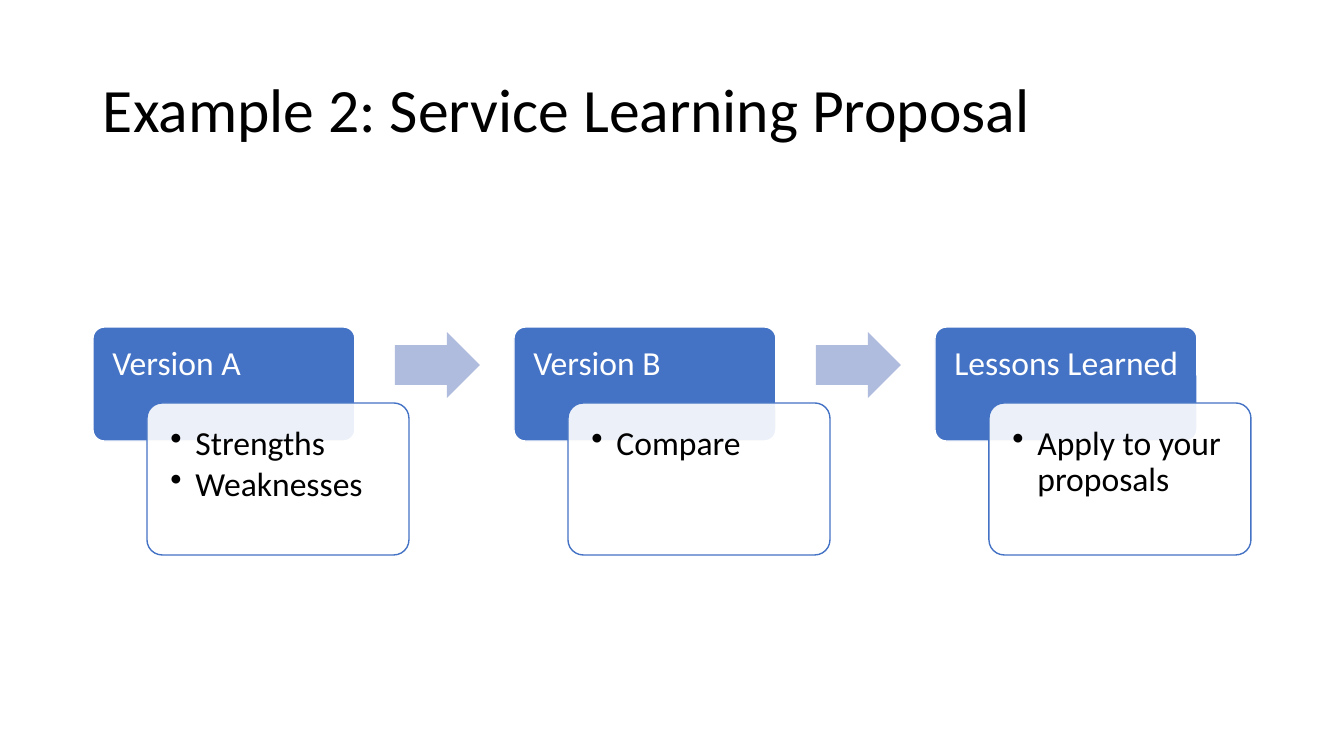
import pptx
import pptx.util
import pptx.dml.color
import pptx.enum.shapes
import pptx.enum.text
import pptx.oxml.ns
from lxml import etree

SHAPE = pptx.enum.shapes.MSO_SHAPE
ANCHOR = pptx.enum.text.MSO_ANCHOR
ALIGN = pptx.enum.text.PP_ALIGN


def px(n):
    return round(n * 12192000 / 1344)


def color(value):
    return pptx.dml.color.RGBColor.from_string(value)


def add_xml(parent, tag, **attributes):
    return etree.SubElement(parent, pptx.oxml.ns.qn(tag), attributes)


class Deck:
    """Draws styled elements on the current slide."""

    font = "Calibri"
    blue, pale, white, black = "4472C4", "B0BCDE", "FFFFFF", "000000"

    def __init__(self):
        self.prs = pptx.Presentation()
        self.prs.slide_width, self.prs.slide_height = px(1344), px(756)
        self.s = self.prs.slides.add_slide(self.prs.slide_layouts[6])

    def fill_text(self, sp, lines, size, ink, insets, anchor=ANCHOR.TOP, after=0, bullets=False):
        tf = sp.text_frame
        sides = ("margin_left", "margin_top", "margin_right", "margin_bottom")
        frame = dict(zip(sides, map(px, insets)), word_wrap=True, vertical_anchor=anchor)
        for name, value in frame.items():
            setattr(tf, name, value)
        for i, line in enumerate(lines):
            p = tf.paragraphs[0] if i == 0 else tf.add_paragraph()
            layout = {"alignment": ALIGN.LEFT, "line_spacing": 0.9,
                      "space_after": pptx.util.Pt(after)}
            for name, value in layout.items():
                setattr(p, name, value)
            if bullets:
                pPr = p._p.get_or_add_pPr()
                pPr.set("marL", str(px(25)))
                pPr.set("indent", str(-px(25)))
                add_xml(pPr, "a:buChar", char="•")
            r = p.add_run()
            r.text = line
            for name, value in {"name": self.font, "size": pptx.util.Pt(size)}.items():
                setattr(r.font, name, value)
            r.font.color.rgb = color(ink)

    def title(self, text, x, y, w, h):
        sp = self.s.shapes.add_textbox(px(x), px(y), px(w), px(h))
        self.fill_text(sp, [text], 44, self.black, (10, 5, 10, 5), ANCHOR.MIDDLE)

    def shape(self, kind, x, y, w, h, fill, line=None, adjustments=(), opacity=100):
        sp = self.s.shapes.add_shape(kind, px(x), px(y), px(w), px(h))
        sp.shadow.inherit = False
        for i, value in enumerate(adjustments):
            sp.adjustments[i] = value
        sp.fill.solid()
        sp.fill.fore_color.rgb = color(fill)
        if opacity < 100:
            clr = sp._element.spPr.find(".//" + pptx.oxml.ns.qn("a:srgbClr"))
            add_xml(clr, "a:alpha", val=str(opacity * 1000))
        if line:
            sp.line.color.rgb = color(line)
            sp.line.width = pptx.util.Pt(1)
        else:
            sp.line.fill.background()
        return sp

    def stage(self, x, heading, points):
        head = self.shape(SHAPE.ROUNDED_RECTANGLE, x, 327, 262, 114,
                          self.blue, self.white, [0.1])
        self.fill_text(head, [heading], 24, self.white, (16, 16, 10, 10))
        body = self.shape(SHAPE.ROUNDED_RECTANGLE, x + 54, 403, 262, 152,
                          self.white, self.blue, [0.1], 90)
        self.fill_text(body, points, 24, self.black, (19, 19, 19, 19), after=3.6, bullets=True)

    def arrow(self, x):
        self.shape(SHAPE.RIGHT_ARROW, x, 332, 85, 66, self.pale, adjustments=[0.6, 0.5])


def main():
    deck = Deck()
    deck.title("Example 2: Service Learning Proposal", 93, 40, 1159, 146)
    stages = [
        ("Version A", ["Strengths", "Weaknesses"]),
        ("Version B", ["Compare"]),
        ("Lessons Learned", ["Apply to your proposals"]),
    ]
    for i, (heading, points) in enumerate(stages):
        x = 93 + 421 * i
        deck.stage(x, heading, points)
        if i < len(stages) - 1:
            deck.arrow(x + 302)
    deck.prs.save("out.pptx")


if __name__ == "__main__":
    main()
